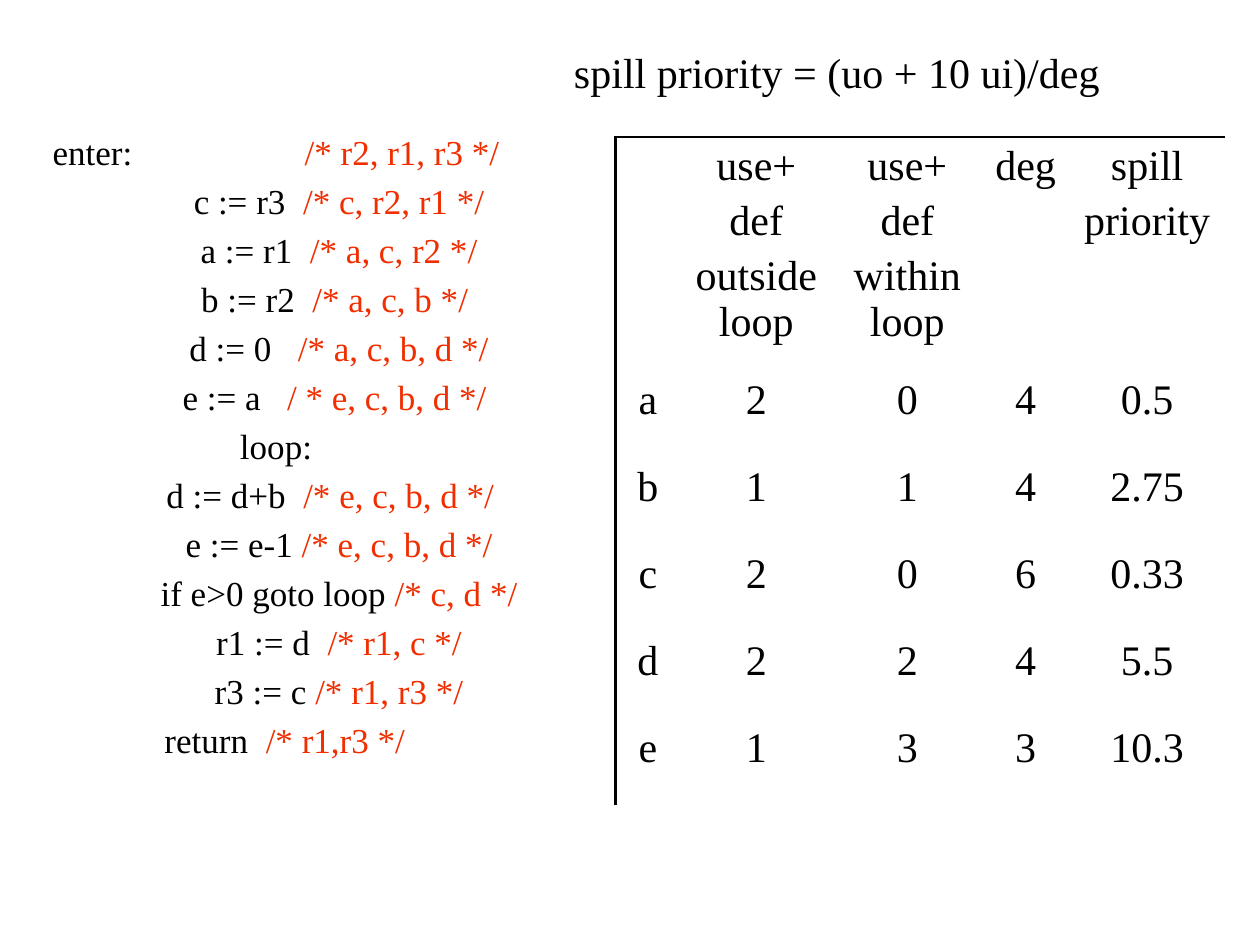
from dataclasses import dataclass

from lxml import etree
from pptx import Presentation
from pptx.dml.color import RGBColor
from pptx.enum.text import MSO_ANCHOR, MSO_AUTO_SIZE, PP_ALIGN
from pptx.oxml.ns import qn
from pptx.util import Cm, Pt

CENTER = PP_ALIGN.CENTER
TOP = MSO_ANCHOR.TOP
GROW = MSO_AUTO_SIZE.SHAPE_TO_FIT_TEXT
TITLE_AND_CONTENT = 1
PLAIN_TABLE_STYLE = "{2D5ABB26-0587-4C30-8999-92F81FD0307C}"


@dataclass(frozen=True)
class Theme:
    font: str = "Times New Roman"
    ink: RGBColor = RGBColor(0x00, 0x00, 0x00)
    comment: RGBColor = RGBColor(0xF0, 0x2E, 0x00)
    large: Pt = Pt(24)
    code: Pt = Pt(20)
    code_gap: Pt = Pt(4)
    cell_gap: Pt = Pt(4.8)
    rule: Pt = Pt(1.5)
    tab: Cm = Cm(2.54)


FORMULA = "spill priority = (uo + 10 ui)/deg"

# Each line: instruction, live registers and variables
CODE = [
    ("enter:\t\t", "/* r2, r1, r3 */"),
    ("\tc := r3  ", "/* c, r2, r1 */"),
    ("\ta := r1  ", "/* a, c, r2 */"),
    ("\tb := r2  ", "/* a, c, b */ "),
    ("\td := 0   ", "/* a, c, b, d */"),
    ("\te := a   ", "/ * e, c, b, d */ "),
    ("loop:", ""),
    ("\td := d+b  ", "/* e, c, b, d */  "),
    ("\te := e-1 ", "/* e, c, b, d */"),
    ("\tif e>0 goto loop ", "/* c, d */"),
    ("\tr1 := d  ", "/* r1, c */"),
    ("\tr3 := c ", "/* r1, r3 */"),
    ("  return  ", "/* r1,r3 */"),
]

PRIORITIES = [
    ["", "use+\ndef\noutside loop", "use+\ndef\nwithin loop", "deg", "spill\npriority"],
    ["a", "2", "0", "4", "0.5"],
    ["b", "1", "1", "4", "2.75"],
    ["c", "2", "0", "6", "0.33"],
    ["d", "2", "2", "4", "5.5"],
    ["e", "1", "3", "3", "10.3"],
]
COLUMN_WIDTHS = [1.3, 3.07, 3.02, 1.75, 3.15]
ROW_HEIGHTS = [4.72] + [1.75] * 5


class SlideBuilder:
    def __init__(self, slide, theme):
        self.slide = slide
        self.theme = theme

    def set_format(self, target, values):
        for name, value in values.items():
            setattr(target, name, value)

    def place(self, shape, left, top, width, height):
        box = {"left": left, "top": top, "width": width, "height": height}
        self.set_format(shape, {name: Cm(size) for name, size in box.items()})
        self.set_format(shape.text_frame, {
            "word_wrap": True, "auto_size": GROW, "vertical_anchor": TOP})

    def add_run(self, paragraph, text, size, color):
        run = paragraph.add_run()
        run.text = text
        self.set_format(run.font, {"name": self.theme.font, "size": size})
        run.font.color.rgb = color

    def paragraphs(self, frame, lines, gap):
        """Yield one centred paragraph per line, with a gap between them."""
        for index, line in enumerate(lines):
            paragraph = frame.add_paragraph() if index else frame.paragraphs[0]
            self.set_format(paragraph, {
                "alignment": CENTER, "space_before": gap if index else Pt(0)})
            yield paragraph, line

    def title(self, text, *box):
        shape = self.slide.shapes.title
        self.place(shape, *box)
        for paragraph, line in self.paragraphs(shape.text_frame, [text], Pt(0)):
            self.add_run(paragraph, line, self.theme.large, self.theme.ink)

    def code(self, lines, *box):
        theme = self.theme
        shape = self.slide.placeholders[1]
        self.place(shape, *box)
        for paragraph, line in self.paragraphs(shape.text_frame, lines, theme.code_gap):
            self.clear_bullet(paragraph)
            for text, color in zip(line, (theme.ink, theme.comment)):
                if text:
                    self.add_run(paragraph, text, theme.code, color)

    def clear_bullet(self, paragraph):
        """Drop bullet and indent, and set the tab distance."""
        properties = paragraph._p.get_or_add_pPr()
        values = {"marL": 0, "indent": 0, "defTabSz": self.theme.tab}
        for name, value in values.items():
            properties.set(name, str(value))
        etree.SubElement(properties, qn("a:buNone"))

    def table(self, rows, widths, heights, left, top):
        frame = self.slide.shapes.add_table(
            len(rows), len(widths), Cm(left), Cm(top),
            Cm(sum(widths)), Cm(sum(heights)))
        table = frame.table
        self.set_format(table, {"first_row": False, "horz_banding": False})
        table._tbl.tblPr.find(qn("a:tableStyleId")).text = PLAIN_TABLE_STYLE
        for column, width in zip(table.columns, widths):
            column.width = Cm(width)
        for row, height in zip(table.rows, heights):
            row.height = Cm(height)
        for r, values in enumerate(rows):
            for c, text in enumerate(values):
                self.cell(table.cell(r, c), text, c == 0, r == 0)

    def cell(self, cell, text, left_rule, top_rule):
        theme = self.theme
        for tag, wanted in (("a:lnL", left_rule), ("a:lnT", top_rule)):
            if wanted:
                self.border(cell, tag)
        cell.fill.background()
        cell.vertical_anchor = TOP
        lines = text.split("\n")
        for paragraph, line in self.paragraphs(cell.text_frame, lines, theme.cell_gap):
            if line:
                self.add_run(paragraph, line, theme.large, theme.ink)

    def border(self, cell, tag):
        properties = cell._tc.get_or_add_tcPr()
        line = etree.SubElement(properties, qn(tag), w=str(self.theme.rule))
        fill = etree.SubElement(line, qn("a:solidFill"))
        etree.SubElement(fill, qn("a:srgbClr"), val=str(self.theme.ink))


def main():
    presentation = Presentation()
    presentation.slide_width = Cm(25.4)
    presentation.slide_height = Cm(19.05)
    layout = presentation.slide_layouts[TITLE_AND_CONTENT]
    builder = SlideBuilder(presentation.slides.add_slide(layout), Theme())

    # Program with the live set after each instruction
    builder.code(CODE, 0, 2.5, 11.13, 13.28)

    # Spill priority of each variable
    builder.table(PRIORITIES, COLUMN_WIDTHS, ROW_HEIGHTS, 12.41, 2.76)

    # Formula above the table
    builder.title(FORMULA, 10.8, 0.81, 12.14, 1.27)

    presentation.save("out.pptx")


if __name__ == "__main__":
    main()
